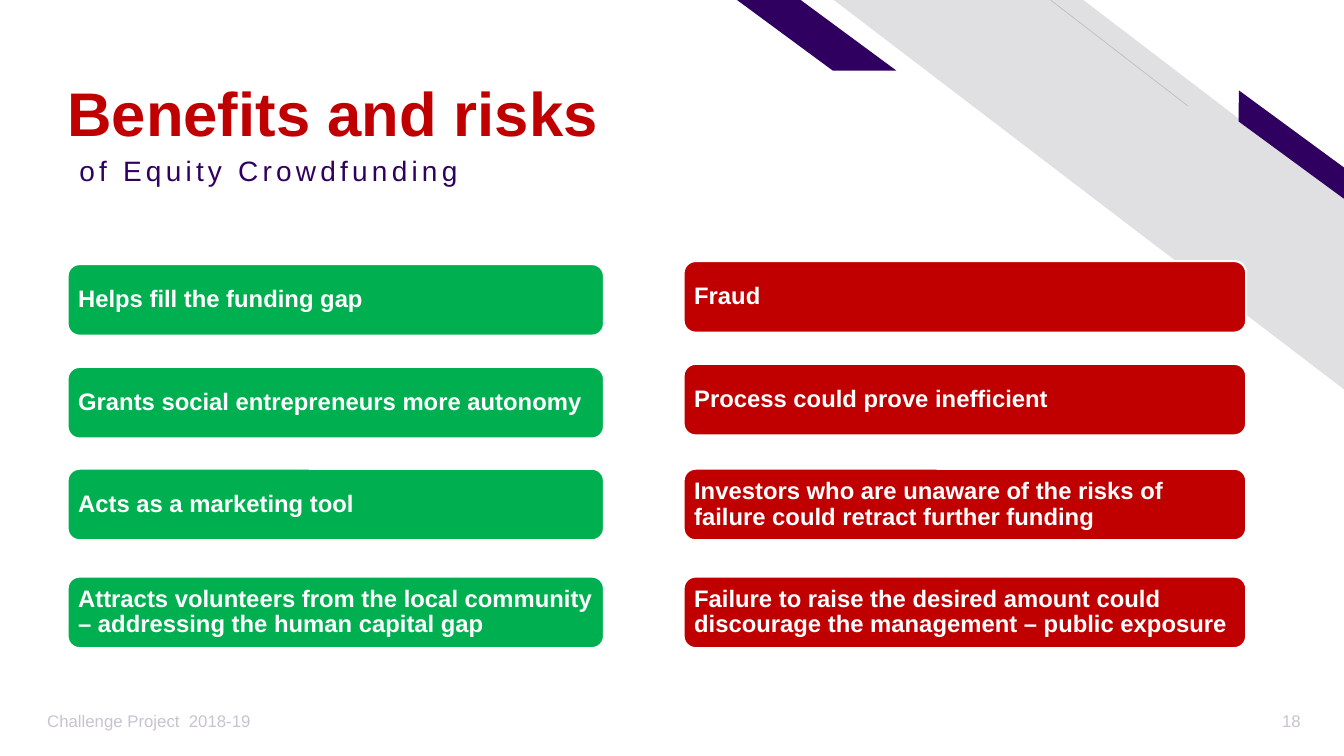
import dataclasses
import pptx
import pptx.dml.color
import pptx.enum.shapes
import pptx.enum.text
import pptx.oxml
import pptx.oxml.ns
import pptx.util

Inches = pptx.util.Inches
Pt = pptx.util.Pt
Shape = pptx.enum.shapes.MSO_SHAPE
Align = pptx.enum.text.PP_ALIGN
Anchor = pptx.enum.text.MSO_ANCHOR


@dataclasses.dataclass(frozen=True)
class Theme:
    font: str = "Arial"
    white: str = "FFFFFF"
    red: str = "C00000"
    green: str = "00B050"
    purple: str = "300061"
    band: str = "E0E0E2"
    rule: str = "BFBFBF"
    muted: str = "C9C2D1"
    title: int = 44
    sub: int = 20
    item: int = 17
    foot: int = 12


THEME = Theme()

BENEFITS = [
    (2.62, "Helps fill the funding gap"),
    (3.64, "Grants social entrepreneurs more autonomy"),
    (4.65, "Acts as a marketing tool"),
    (5.72, "Attracts volunteers from the local community – addressing the human capital gap"),
]
RISKS = [
    (2.59, "Fraud"),
    (3.61, "Process could prove inefficient"),
    (4.65, "Investors who are unaware of the risks of failure could retract further funding"),
    (5.72, "Failure to raise the desired amount could discourage the management – public exposure"),
]


def color(code):
    return pptx.dml.color.RGBColor.from_string(code)


def write(shape, text, size, code, bold=False, align=Align.LEFT,
          anchor=Anchor.MIDDLE, lead=1.0):
    """Put one styled run in the shape and return the run."""
    frame = shape.text_frame
    frame.word_wrap = True
    frame.vertical_anchor = anchor
    para = frame.paragraphs[0]
    para.alignment = align
    para.line_spacing = lead
    run = para.add_run()
    run.text = text
    run.font.name = THEME.font
    run.font.size = Pt(size)
    run.font.bold = bold
    run.font.color.rgb = color(code)
    return run


def label(slide, box, *args, **style):
    """Add a text box and return it with its run."""
    shape = slide.shapes.add_textbox(*map(Inches, box))
    return shape, write(shape, *args, **style)


def solid(slide, kind, box, code):
    shape = slide.shapes.add_shape(kind, *map(Inches, box))
    shape.shadow.inherit = False
    shape.fill.solid()
    shape.fill.fore_color.rgb = color(code)
    shape.line.fill.background()
    return shape


def slant(slide, kind, box, code, adjust, turn=0):
    """Add a mirrored slanted shape."""
    shape = solid(slide, kind, box, code)
    shape.adjustments[0] = adjust
    shape.rotation = turn
    shape._element.spPr.find(pptx.oxml.ns.qn("a:xfrm")).set("flipH", "1")


def corner(slide, left, top):
    """Draw the diagonal bands, placed from the top left of the area."""
    slant(slide, Shape.DIAGONAL_STRIPE, (left + 0.96, top, 5.07, 3.87),
          THEME.band, 0.512)
    ends = (left + 4.47, top + 1.05, left + 3.11, top)
    line = slide.shapes.add_connector(
        pptx.enum.shapes.MSO_CONNECTOR.STRAIGHT, *map(Inches, ends))
    line.line.color.rgb = color(THEME.rule)
    line.line.width = Pt(0.5)
    line._element.spPr.append(pptx.oxml.parse_xml(
        "<a:effectLst %s/>" % pptx.oxml.ns.nsdecls("a")))
    slant(slide, Shape.PARALLELOGRAM, (left + 4.76, top + 1.31, 1.48, 0.25),
          THEME.purple, 0.72, 36.3)
    slant(slide, Shape.PARALLELOGRAM, (left, top, 1.58, 0.7),
          THEME.purple, 1.356)


def header(slide, left, top):
    _, run = label(slide, (left, top + 1.28, 8.06, 0.67),
                   " of Equity Crowdfunding", THEME.sub, THEME.purple,
                   anchor=Anchor.TOP, lead=0.9)
    run._r.get_or_add_rPr().set("spc", "300")
    title, _ = label(slide, (left, top, 9.11, 1.26), "Benefits and risks",
                     THEME.title, THEME.red, bold=True,
                     anchor=Anchor.BOTTOM, lead=0.9)
    title.text_frame.margin_bottom = 0


def column(slide, left, width, items, code):
    """Stack rounded cards, each at its own top."""
    for top, text in items:
        card = solid(slide, Shape.ROUNDED_RECTANGLE,
                     (left, top, width, 0.71), code)
        card.line.color.rgb = color(THEME.white)
        card.line.width = Pt(1.5)
        frame = card.text_frame
        frame.margin_left = frame.margin_right = Inches(0.07)
        frame.margin_top = frame.margin_bottom = Inches(0.07)
        write(card, text, THEME.item, THEME.white, bold=True, lead=0.9)


def footer(slide, left, top, width):
    label(slide, (left, top, 4.5, 0.4), "Challenge Project  2018-19",
          THEME.foot, THEME.muted)
    label(slide, (left + width - 0.81, top, 0.81, 0.4), "18",
          THEME.foot, THEME.muted, align=Align.RIGHT)


def main():
    deck = pptx.Presentation()
    deck.slide_width = Inches(13.33)
    deck.slide_height = Inches(7.5)
    slide = deck.slides.add_slide(deck.slide_layouts[6])
    corner(slide, 7.31, 0)
    header(slide, 0.57, 0.23)
    column(slide, 0.67, 5.32, BENEFITS, THEME.green)
    column(slide, 6.78, 5.58, RISKS, THEME.red)
    footer(slide, 0.37, 6.95, 12.63)
    deck.save("out.pptx")


if __name__ == "__main__":
    main()
